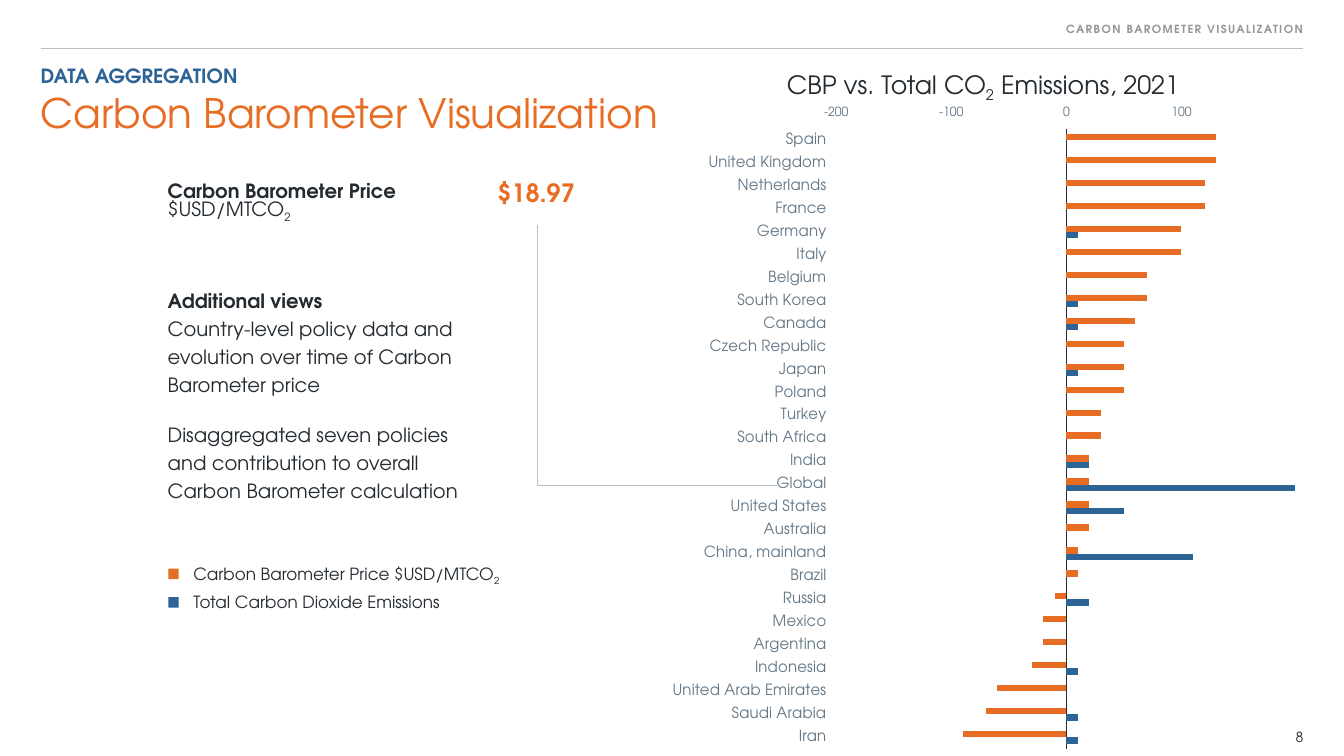
from dataclasses import dataclass

from lxml.etree import SubElement
from pptx import Presentation
from pptx.chart.data import CategoryChartData
from pptx.dml.color import RGBColor
from pptx.enum.chart import XL_CHART_TYPE, XL_TICK_LABEL_POSITION, XL_TICK_MARK
from pptx.enum.shapes import MSO_CONNECTOR, MSO_SHAPE
from pptx.enum.text import MSO_ANCHOR, PP_ALIGN
from pptx.oxml import parse_xml
from pptx.oxml.ns import nsdecls, qn
from pptx.slide import Slide
from pptx.text.text import Font, TextFrame
from pptx.util import Pt

FONT_NAME = "TeX Gyre Adventor"
ORANGE = RGBColor(0xE8, 0x6D, 0x24)
BLUE = RGBColor(0x2E, 0x63, 0x96)
INK = RGBColor(0x23, 0x2A, 0x30)
SLATE = RGBColor(0x62, 0x76, 0x86)
GRAY = RGBColor(0x93, 0x95, 0x98)
RULE_GRAY = RGBColor(0xBE, 0xBF, 0xC1)
WHITE = RGBColor(0xFF, 0xFF, 0xFF)


@dataclass(frozen=True)
class Span:
    text: str
    size: float
    color: RGBColor = INK
    bold: bool = False
    subscript: bool = False
    spacing: int = 0
    line_break: bool = False


@dataclass(frozen=True)
class Box:
    left: float
    top: float
    width: float
    height: float


@dataclass(frozen=True)
class CountryRow:
    name: str
    price: int
    emissions: int


@dataclass(frozen=True)
class LegendEntry:
    color: RGBColor
    spans: list[Span]


COUNTRIES = [
    CountryRow("Spain", 130, 0),
    CountryRow("United Kingdom", 130, 0),
    CountryRow("Netherlands", 120, 0),
    CountryRow("France", 120, 0),
    CountryRow("Germany", 100, 10),
    CountryRow("Italy", 100, 0),
    CountryRow("Belgium", 70, 0),
    CountryRow("South Korea", 70, 10),
    CountryRow("Canada", 60, 10),
    CountryRow("Czech Republic", 50, 0),
    CountryRow("Japan", 50, 10),
    CountryRow("Poland", 50, 0),
    CountryRow("Turkey", 30, 0),
    CountryRow("South Africa", 30, 0),
    CountryRow("India", 20, 20),
    CountryRow("Global", 20, 280),
    CountryRow("United States", 20, 50),
    CountryRow("Australia", 20, 0),
    CountryRow("China, mainland", 10, 110),
    CountryRow("Brazil", 10, 0),
    CountryRow("Russia", -10, 20),
    CountryRow("Mexico", -20, 0),
    CountryRow("Argentina", -20, 0),
    CountryRow("Indonesia", -30, 10),
    CountryRow("United Arab Emirates", -60, 0),
    CountryRow("Saudi Arabia", -70, 10),
    CountryRow("Iran", -90, 10),
]

LEGEND = [
    LegendEntry(ORANGE, [Span("Carbon Barometer Price $USD/MTCO", 12), Span("2", 12, subscript=True)]),
    LegendEntry(BLUE, [Span("Total Carbon Dioxide Emissions", 12)]),
]


def style_font(font: Font, size: float, color: RGBColor, bold: bool = False) -> None:
    font.name = FONT_NAME
    font.size = Pt(size)
    font.bold = bold
    font.color.rgb = color


def write_text(frame: TextFrame, paragraphs: list[list[Span]], line_spacing: float = 1.0,
               alignment: PP_ALIGN = PP_ALIGN.LEFT, gap: float = 0) -> None:
    for index, spans in enumerate(paragraphs):
        paragraph = frame.add_paragraph() if index else frame.paragraphs[0]
        paragraph.alignment = alignment
        paragraph.line_spacing = line_spacing
        if index:
            paragraph.space_before = Pt(gap)
        style_font(paragraph.font, spans[0].size, spans[0].color, spans[0].bold)
        for span in spans:
            run = paragraph.add_run()
            run.text = span.text
            style_font(run.font, span.size, span.color, span.bold)
            properties = run._r.get_or_add_rPr()
            if span.subscript:
                properties.set("baseline", "-25000")
            if span.spacing:
                properties.set("spc", str(span.spacing))
            if span.line_break:
                paragraph.add_line_break()


def add_text(slide: Slide, box: Box, paragraphs: list[list[Span]], side_inset: float = 0,
             line_spacing: float = 1.0, alignment: PP_ALIGN = PP_ALIGN.LEFT, gap: float = 0) -> None:
    shape = slide.shapes.add_textbox(Pt(box.left), Pt(box.top), Pt(box.width), Pt(box.height))
    frame = shape.text_frame
    frame.word_wrap = True
    frame.margin_left = frame.margin_right = Pt(side_inset)
    frame.margin_top = frame.margin_bottom = Pt(3.6)
    write_text(frame, paragraphs, line_spacing, alignment, gap)


def add_rule(slide: Slide, start: tuple[float, float], end: tuple[float, float]) -> None:
    connector = slide.shapes.add_connector(MSO_CONNECTOR.STRAIGHT, *map(Pt, start + end))
    connector.line.color.rgb = RULE_GRAY
    connector.line.width = Pt(0.5)
    SubElement(connector._element.spPr, qn("a:effectLst"))


def add_price_table(slide: Slide) -> None:
    table = slide.shapes.add_table(1, 2, Pt(119.8), Pt(129), Pt(486), Pt(66)).table
    table.first_row = table.horz_banding = False
    contents = [
        (235.5, [[Span("Carbon Barometer Price", 14, bold=True)],
                 [Span("$USD/MTCO", 14), Span("2", 14, subscript=True)]]),
        (250.5, [[Span("$18.97", 18, ORANGE, bold=True)]]),
    ]
    for index, (width, paragraphs) in enumerate(contents):
        table.columns[index].width = Pt(width)
        cell = table.cell(0, index)
        cell.fill.solid()
        cell.fill.fore_color.rgb = WHITE
        cell.margin_left = cell.margin_right = Pt(0)
        cell.margin_top = cell.margin_bottom = Pt(3.6)
        cell.vertical_anchor = MSO_ANCHOR.TOP
        write_text(cell.text_frame, paragraphs, line_spacing=0.9)


def add_country_chart(slide: Slide) -> None:
    data = CategoryChartData()
    data.categories = [country.name for country in COUNTRIES]
    data.add_series("Carbon Barometer Price", [country.price for country in COUNTRIES])
    data.add_series("Total Carbon Dioxide Emissions", [country.emissions for country in COUNTRIES])
    chart = slide.shapes.add_chart(
        XL_CHART_TYPE.BAR_CLUSTERED, Pt(480.4), Pt(54.7), Pt(445), Pt(491), data).chart
    chart.has_title = chart.has_legend = False
    style_font(chart.font, 10, INK)

    plot = chart.plots[0]
    plot.gap_width = 165
    plot.overlap = 0
    plot.vary_by_categories = False
    for series, entry in zip(plot.series, LEGEND):
        series.invert_if_negative = False
        series.format.fill.solid()
        series.format.fill.fore_color.rgb = entry.color

    for axis, size in ((chart.category_axis, 11), (chart.value_axis, 9)):
        axis.has_major_gridlines = False
        axis.major_tick_mark = axis.minor_tick_mark = XL_TICK_MARK.NONE
        axis.tick_label_position = XL_TICK_LABEL_POSITION.LOW
        style_font(axis.tick_labels.font, size, SLATE)
    chart.category_axis.reverse_order = True
    chart.category_axis.format.line.color.rgb = INK
    chart.category_axis.format.line.width = Pt(1.25)
    chart.value_axis.major_tick_mark = XL_TICK_MARK.OUTSIDE
    chart.value_axis.minimum_scale = -200
    chart.value_axis.maximum_scale = 199
    chart.value_axis.major_unit = 100
    chart.value_axis.format.line.fill.background()

    plot_area = chart._chartSpace.chart.plotArea
    for layout in plot_area.findall(qn("c:layout")):
        plot_area.remove(layout)
    plot_area.insert(0, parse_xml(
        f'<c:layout {nsdecls("c")}><c:manualLayout><c:layoutTarget val="inner"/>'
        '<c:xMode val="edge"/><c:yMode val="edge"/><c:x val="0.236"/><c:y val="0.076"/>'
        '<c:w val="0.764"/><c:h val="0.902"/></c:manualLayout></c:layout>'))


def add_legend(slide: Slide) -> None:
    for index, entry in enumerate(LEGEND):
        top = 399 + 20.3 * index
        marker = slide.shapes.add_shape(MSO_SHAPE.RECTANGLE, Pt(120.2), Pt(top + 7.2), Pt(7.5), Pt(7.5))
        marker.shadow.inherit = False
        marker.fill.solid()
        marker.fill.fore_color.rgb = entry.color
        marker.line.fill.background()
        add_text(slide, Box(131, top, 382, 22), [entry.spans], side_inset=7.2)


def main() -> None:
    presentation = Presentation()
    presentation.slide_width, presentation.slide_height = Pt(960), Pt(540)
    slide = presentation.slides.add_slide(presentation.slide_layouts[6])
    add_rule(slide, (29, 34.7), (931, 34.7))
    add_price_table(slide)
    add_text(slide, Box(29, 42.3, 901, 59), [[
        Span("DATA AGGREGATION", 14, BLUE, bold=True, line_break=True),
        Span("Carbon Barometer Visualization", 29, ORANGE)]])
    add_text(slide, Box(29, 12.2, 902, 17), [[
        Span("CARBON BAROMETER VISUALIZATION", 8, GRAY, bold=True, spacing=100)]],
        alignment=PP_ALIGN.RIGHT)
    add_text(slide, Box(870, 517, 61, 19), [[Span("8", 10)]], alignment=PP_ALIGN.RIGHT)
    add_country_chart(slide)
    add_text(slide, Box(555, 45.8, 337, 29), [[
        Span("CBP vs. Total CO", 18), Span("2", 18, subscript=True),
        Span(" Emissions, 2021", 18)]], side_inset=7.2)
    add_text(slide, Box(119.8, 199.3, 230, 163), [
        [Span("Additional views", 14, bold=True, line_break=True),
         Span("Country-level policy data and evolution over time of Carbon Barometer price", 14)],
        [Span("Disaggregated seven policies and contribution to overall "
              "Carbon Barometer calculation", 14)]], line_spacing=1.2, gap=15)
    add_legend(slide)
    add_rule(slide, (384, 160.5), (384, 347))
    add_rule(slide, (384, 347), (555, 347))
    presentation.save("out.pptx")


if __name__ == "__main__":
    main()
